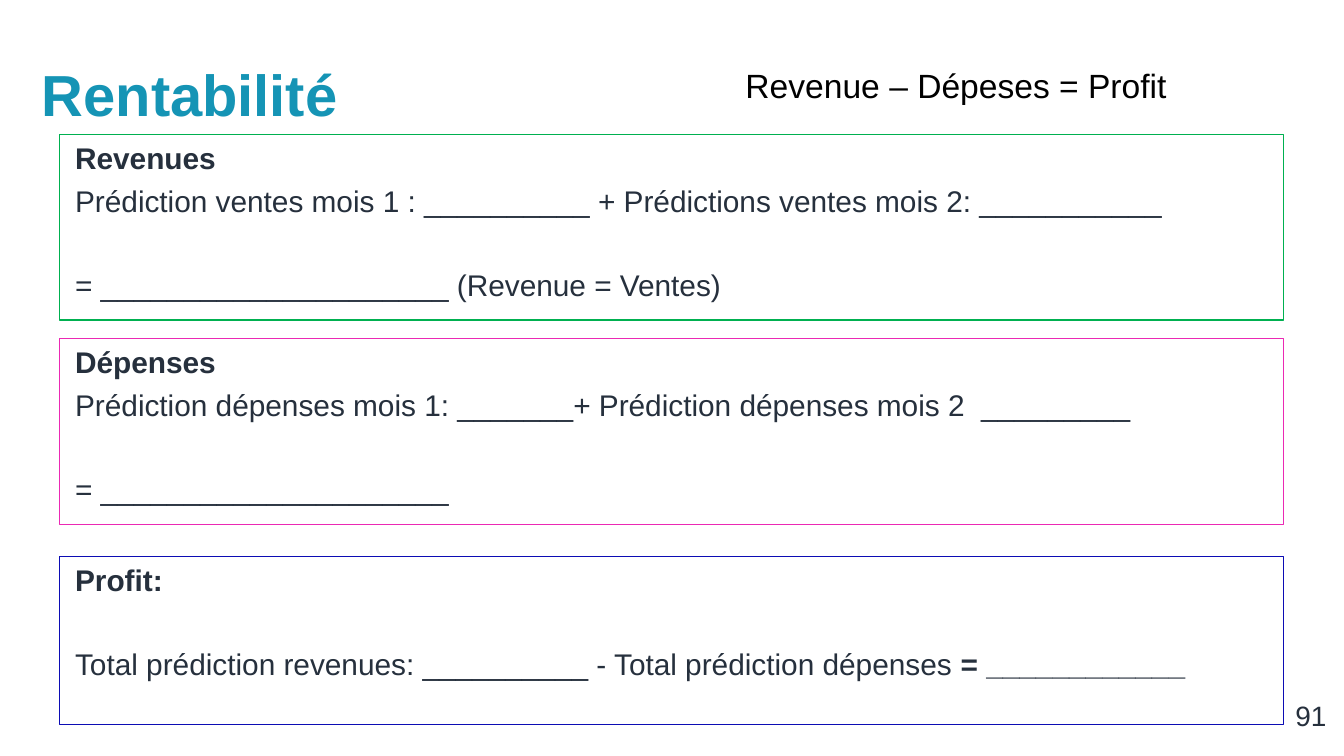
from pptx import Presentation
from pptx.dml.color import RGBColor
from pptx.enum.text import MSO_ANCHOR, MSO_AUTO_SIZE, PP_ALIGN
from pptx.oxml.ns import qn
from pptx.util import Cm, Pt

TOP, MIDDLE, BOTTOM = MSO_ANCHOR.TOP, MSO_ANCHOR.MIDDLE, MSO_ANCHOR.BOTTOM
LEFT, RIGHT = PP_ALIGN.LEFT, PP_ALIGN.RIGHT
NO_FIT = MSO_AUTO_SIZE.NONE
COMPARISON_LAYOUT = 4

COLORS = {
    "title": "1594B5",
    "text": "26303D",
    "black": "000000",
    "revenue": "00B050",
    "expense": "EB29B4",
    "profit": "0C0CB4",
}
LINE_GAP = 1
EMPTY_LINE = 23  # space before a paragraph that follows one free line

# Border colour, top, height, then paragraphs: space before and (text, bold) spans
SECTIONS = [
    ("revenue", 2.54, 3.51, [
        (0, [("Revenues", True)]),
        (LINE_GAP, [("Prédiction ventes mois 1 : __________ + "
                     "Prédictions ventes mois 2: ___________", False)]),
        (EMPTY_LINE, [("= _____________________ (Revenue = Ventes)", False)]),
    ]),
    ("expense", 6.4, 3.51, [
        (0, [("Dépenses", True)]),
        (LINE_GAP, [("Prédiction dépenses mois 1: _______+ "
                     "Prédiction dépenses mois 2  _________", False)]),
        (EMPTY_LINE, [("= _____________________", False)]),
    ]),
    ("profit", 10.52, 3.18, [
        (0, [("Profit:", True)]),
        (EMPTY_LINE, [("Total prédiction revenues: __________ - "
                       "Total prédiction dépenses ", False),
                      ("= ____________", True)]),
    ]),
]


def set_all(target, values):
    for name, value in values.items():
        setattr(target, name, value)


class SlideBuilder:
    def __init__(self, slide, font="Arial"):
        self.slide = slide
        self.font = font
        self.bodies = list(slide.placeholders)[1:]

    def place(self, box, left, top, width, height):
        set_all(box, {"left": Cm(left), "top": Cm(top),
                      "width": Cm(width), "height": Cm(height)})

    def frame(self, box, anchor=TOP, inset_x=0, inset_y=0):
        set_all(box.text_frame, {
            "word_wrap": True, "auto_size": NO_FIT, "vertical_anchor": anchor,
            "margin_left": Cm(inset_x), "margin_right": Cm(inset_x),
            "margin_top": Cm(inset_y), "margin_bottom": Cm(inset_y)})
        return box.text_frame

    def span(self, para, text, size, color, bold=False):
        span = para.add_run()
        span.text = text
        set_all(span.font, {"name": self.font, "size": Pt(size), "bold": bold})
        span.font.color.rgb = RGBColor.from_string(COLORS[color])

    def title(self, text):
        box = self.slide.shapes.title
        self.place(box, 0.79, 1.12, 15.72, 1.32)
        para = self.frame(box, BOTTOM).paragraphs[0]
        set_all(para, {"alignment": LEFT, "line_spacing": 0.9})
        self.span(para, text, 31, "title", bold=True)

    def section(self, color, top, height, paragraphs):
        """Fill the next free body placeholder and give it a coloured border."""
        box = self.bodies.pop(0)
        self.place(box, 1.12, top, 23.14, height)
        box.line.color.rgb = RGBColor.from_string(COLORS[color])
        box.line.width = Pt(0.75)
        frame = self.frame(box)
        for number, (space, spans) in enumerate(paragraphs):
            para = frame.add_paragraph() if number else frame.paragraphs[0]
            properties = para._p.get_or_add_pPr()
            properties.set("marL", str(Cm(0.3)))
            properties.set("indent", "0")
            properties.append(properties.makeelement(qn("a:buNone"), {}))
            set_all(para, {"alignment": LEFT, "line_spacing": 1.15,
                           "space_before": Pt(space), "space_after": Pt(0)})
            for text, bold in spans:
                self.span(para, text, 16, color="text", bold=bold)

    def label(self, text, area, size, color, align=LEFT, **frame_format):
        box = self.slide.shapes.add_textbox(0, 0, 0, 0)
        self.place(box, *area)
        para = self.frame(box, **frame_format).paragraphs[0]
        para.alignment = align
        self.span(para, text, size, color)

    def remove_unused(self):
        for box in self.bodies:
            box.element.getparent().remove(box.element)


def main():
    deck = Presentation()
    set_all(deck, {"slide_width": Cm(25.4), "slide_height": Cm(14.29)})
    page = SlideBuilder(deck.slides.add_slide(deck.slide_layouts[COMPARISON_LAYOUT]))
    page.title("Rentabilité")
    for section in SECTIONS:
        page.section(*section)
    page.remove_unused()
    page.label("91", (24.16, 12.98, 0.91, 1.09), 15, "text", RIGHT, anchor=MIDDLE)
    page.label("Revenue – Dépeses = Profit", (13.84, 1.09, 10.41, 1.02), 18, "black",
               inset_x=0.25, inset_y=0.13)
    deck.save("out.pptx")


if __name__ == "__main__":
    main()
